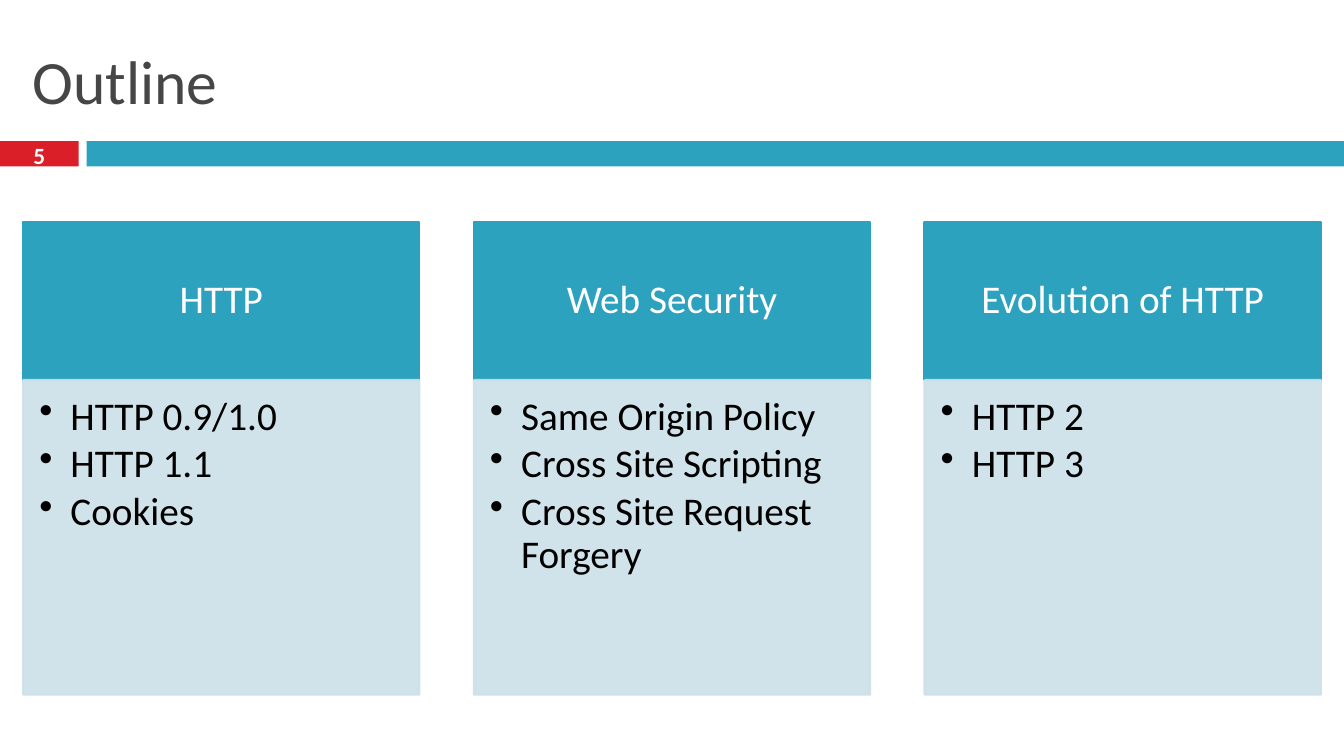
from lxml import etree
from pptx import Presentation
from pptx.dml.color import RGBColor
from pptx.enum.shapes import MSO_SHAPE
from pptx.enum.text import MSO_ANCHOR, MSO_AUTO_SIZE, PP_ALIGN
from pptx.oxml.ns import qn
from pptx.util import Pt

PX = 9144
FONT = "Calibri"
RECT = MSO_SHAPE.RECTANGLE
TOP, MIDDLE = MSO_ANCHOR.TOP, MSO_ANCHOR.MIDDLE
LEFT, CENTER = PP_ALIGN.LEFT, PP_ALIGN.CENTER
NO_FIT = MSO_AUTO_SIZE.NONE

WHITE = RGBColor(0xFF, 0xFF, 0xFF)
BLACK = RGBColor(0x00, 0x00, 0x00)
GRAY = RGBColor(0x46, 0x46, 0x46)
RED = RGBColor(0xDA, 0x1F, 0x28)
TEAL = RGBColor(0x2D, 0xA2, 0xBF)
PALE = RGBColor(0xCD, 0xE0, 0xE8)

TOPICS = [
    ("HTTP", ["HTTP 0.9/1.0", "HTTP 1.1", "Cookies"]),
    ("Web Security", ["Same Origin Policy", "Cross Site Scripting",
                      "Cross Site Request Forgery"]),
    ("Evolution of HTTP", ["HTTP 2", "HTTP 3"]),
]


def place(sp, x, y, w, h):
    """Move a shape to a box given in px."""
    sp.left, sp.top, sp.width, sp.height = (v * PX for v in (x, y, w, h))


def add_rect(s, box, color, outlined=False):
    """Add a flat rectangle, optionally outlined in its own colour."""
    sp = s.shapes.add_shape(RECT, *(v * PX for v in box))
    sp.shadow.inherit = False
    sp.fill.solid()
    sp.fill.fore_color.rgb = color
    if outlined:
        sp.line.color.rgb = color
        sp.line.width = Pt(1.5)
    else:
        sp.line.fill.background()
    return sp


def set_text(sp, lines, size, color, align, anchor, insets, bold=False):
    """Write one paragraph per line and return the paragraphs."""
    tf = sp.text_frame
    tf.text = "\n".join(lines)
    tf.word_wrap = True
    tf.auto_size = NO_FIT
    tf.vertical_anchor = anchor
    tf.margin_left, tf.margin_top, tf.margin_right, tf.margin_bottom = (
        v * PX for v in insets)
    for p in tf.paragraphs:
        p.alignment = align
        p.font.name = FONT
        p.font.size = Pt(size)
        p.font.bold = bold
        p.font.color.rgb = color
    return tf.paragraphs


def set_bullet(p, indent):
    """Give a paragraph a round bullet with a hanging indent in px."""
    pPr = p._p.get_or_add_pPr()
    pPr.set("marL", str(indent * PX))
    pPr.set("indent", str(-indent * PX))
    bullet = etree.Element(qn("a:buChar"), char="•")
    pPr.insert_element_before(bullet, "a:tabLst", "a:defRPr", "a:extLst")


def set_opacity(sp, percent):
    """Make the fill and the outline of a shape partly transparent."""
    for clr in sp._element.spPr.iter(qn("a:srgbClr")):
        etree.SubElement(clr, qn("a:alpha"), val=str(percent * 1000))


def add_header(s, x, y, w, title, number):
    """Place the title above the band that carries the slide number."""
    place(s.shapes.title, x + 22, y + 25, w - 44, 108)
    set_text(s.shapes.title, [title], 44, GRAY, LEFT, MIDDLE, (10, 5, 10, 5))
    badge = add_rect(s, (x, y + 140, 78, 25), RED)
    set_text(badge, [number], 16.6, WHITE, CENTER, MIDDLE, (0, 2, 0, 0), bold=True)
    add_rect(s, (x + 86, y + 140, w - 86, 25), TEAL)


def add_card(s, x, y, w, h, heading, items):
    """Place a heading block above its bulleted list."""
    head_h = 157
    head = add_rect(s, (x, y, w, head_h), TEAL, outlined=True)
    p = set_text(head, [heading], 28, WHITE, CENTER, MIDDLE, (22, 12, 22, 12))[0]
    p.line_spacing = 0.9
    body = add_rect(s, (x, y + head_h, w, h - head_h), PALE, outlined=True)
    set_opacity(body, 90)
    for p in set_text(body, items, 28, BLACK, LEFT, TOP, (16, 16, 22, 24)):
        p.line_spacing = 0.9
        p.space_after = Pt(4)
        set_bullet(p, 31)


def add_cards(s, x, y, w, h, topics):
    """Spread equal cards across the box."""
    card_w = 393
    step = (w - card_w) // (len(topics) - 1)
    for i, (heading, items) in enumerate(topics):
        add_card(s, x + i * step, y, card_w, h, heading, items)


def main():
    """Build the outline slide."""
    prs = Presentation()
    prs.slide_width, prs.slide_height = 1333 * PX, 750 * PX
    s = prs.slides.add_slide(prs.slide_layouts[5])
    add_header(s, 0, 0, 1333, "Outline", "5")
    add_cards(s, 23, 220, 1288, 469, TOPICS)
    prs.save("out.pptx")


if __name__ == "__main__":
    main()
